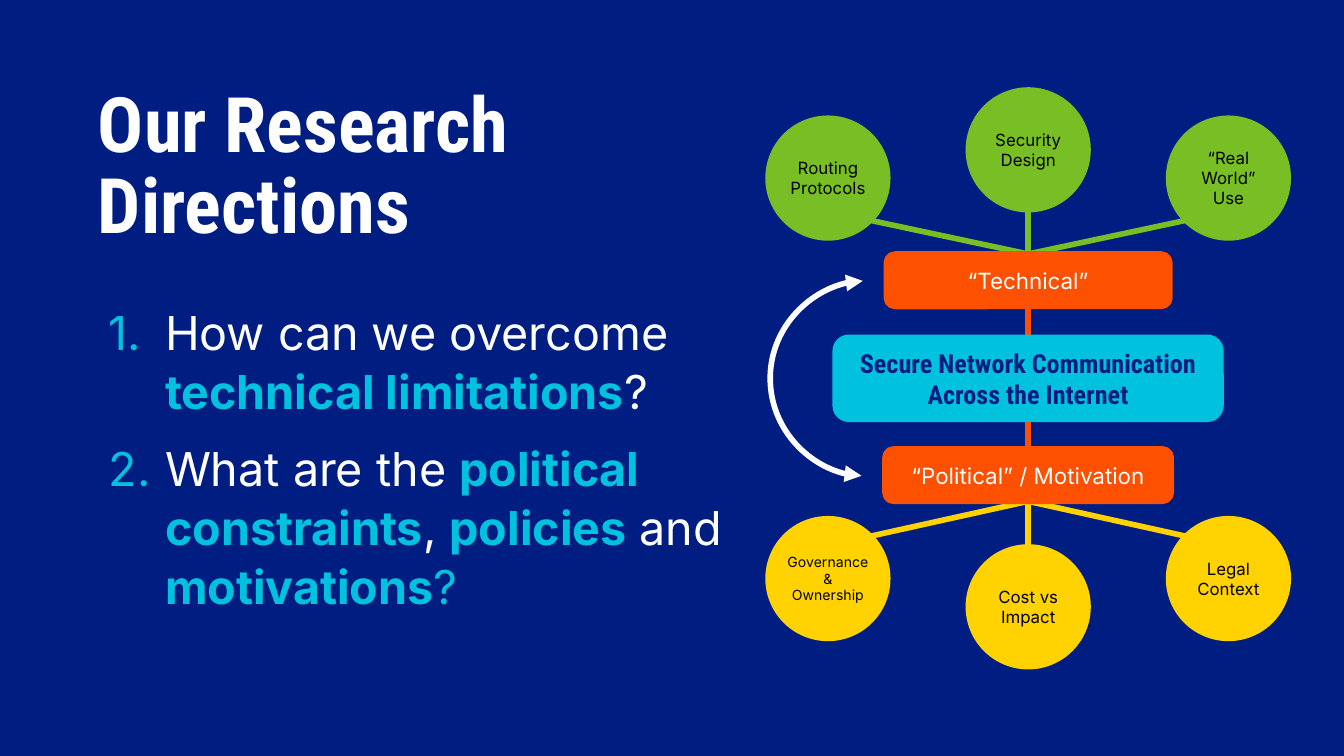
from dataclasses import dataclass

from lxml.etree import SubElement
from pptx import Presentation
from pptx.dml.color import RGBColor
from pptx.enum.shapes import MSO_CONNECTOR, MSO_SHAPE
from pptx.enum.text import MSO_ANCHOR, PP_ALIGN
from pptx.oxml.ns import qn
from pptx.util import Inches, Pt


@dataclass(frozen=True)
class Theme:
    navy: str = "001E82"
    cyan: str = "00C2DE"
    orange: str = "FD5000"
    green: str = "78BF26"
    yellow: str = "FFD200"
    white: str = "FFFFFF"
    black: str = "000000"
    head_font: str = "Roboto Condensed"
    body_font: str = "Inter"
    title: float = 41
    body: float = 25
    core: float = 14
    hub: float = 12
    topic: float = 9
    small: float = 7.5
    line: float = 3


T = Theme()


@dataclass(frozen=True)
class Box:
    text: str
    top: float
    width: float
    height: float
    fill: str
    size: float = T.hub
    color: str = T.white
    font: str = T.body_font
    bold: bool = False


@dataclass(frozen=True)
class Topic:
    text: str
    column: int  # -1 left, 0 centre, 1 right
    top: float
    fill: str
    size: float = T.topic


# Diagram geometry
CENTER_X, COLUMN_GAP, DIAMETER = 7.65, 1.49, 0.89
DIAGONAL = DIAMETER / 2 * 0.5 ** 0.5

TECHNICAL = Box("“Technical”", 1.89, 2.11, 0.39, T.orange)
CORE = Box("Secure Network Communication Across the Internet", 2.51, 2.87, 0.61,
           T.cyan, T.core, T.navy, T.head_font, True)
POLITICAL = Box("“Political” / Motivation", 3.34, 2.13, 0.39, T.orange)

TECHNICAL_TOPICS = [
    Topic("Security Design", 0, 0.67, T.green),
    Topic("Routing Protocols", -1, 0.88, T.green),
    Topic("“Real World” Use", 1, 0.88, T.green),
]
POLITICAL_TOPICS = [
    Topic("Legal Context", 1, 3.86, T.yellow),
    Topic("Cost vs Impact", 0, 4.07, T.yellow),
    Topic("Governance & Ownership", -1, 3.86, T.yellow, T.small),
]

# Runs of each question: text, colour, bold
QUESTIONS = [
    [("How can we overcome ", T.white, False),
     ("technical limitations", T.cyan, True),
     ("?", T.white, False)],
    [("What are the ", T.white, False),
     ("political constraints", T.cyan, True),
     (", ", T.white, False),
     ("policies", T.cyan, True),
     (" and ", T.white, False),
     ("motivations", T.cyan, True),
     ("?", T.cyan, False)],
]


def style(font, name: str, size: float, color: str, bold: bool = False) -> None:
    font.name, font.size, font.bold = name, Pt(size), bold
    font.color.rgb = RGBColor.from_string(color)


def set_insets(tf, inset: float) -> None:
    tf.word_wrap = True
    tf.margin_left = tf.margin_right = Inches(inset)
    tf.margin_top = tf.margin_bottom = Inches(inset)


def add_text_frame(s, left: float, top: float, width: float, height: float):
    tf = s.shapes.add_textbox(Inches(left), Inches(top),
                              Inches(width), Inches(height)).text_frame
    set_insets(tf, 0.1)
    return tf


def number_paragraph(p) -> None:
    pPr = p._p.get_or_add_pPr()
    pPr.set("marL", str(Inches(0.5)))
    pPr.set("indent", str(Inches(-0.42)))
    color = SubElement(pPr, qn("a:buClr"))
    SubElement(color, qn("a:srgbClr"), val=T.cyan)
    SubElement(pPr, qn("a:buAutoNum"), type="arabicPeriod")


def add_node(s, kind, left: float, top: float, width: float, height: float,
             fill: str, text: str, inset: float):
    sp = s.shapes.add_shape(kind, Inches(left), Inches(top),
                            Inches(width), Inches(height))
    sp.shadow.inherit = False
    sp.fill.solid()
    sp.fill.fore_color.rgb = RGBColor.from_string(fill)
    sp.line.color.rgb = RGBColor.from_string(fill)
    sp.line.width = Pt(T.line)
    tf = sp.text_frame
    set_insets(tf, inset)
    tf.vertical_anchor = MSO_ANCHOR.MIDDLE
    tf.text = text
    tf.paragraphs[0].alignment = PP_ALIGN.CENTER
    return sp


def add_box(s, box: Box):
    sp = add_node(s, MSO_SHAPE.ROUNDED_RECTANGLE, CENTER_X - box.width / 2, box.top,
                  box.width, box.height, box.fill, box.text, 0.1)
    style(sp.text_frame.paragraphs[0].runs[0].font, box.font, box.size, box.color, box.bold)
    return sp


def add_line(s, color: str, start: tuple[float, float], end: tuple[float, float],
             kind=MSO_CONNECTOR.STRAIGHT):
    line = s.shapes.add_connector(kind, *map(Inches, start + end))
    line.line.color.rgb = RGBColor.from_string(color)
    line.line.width = Pt(T.line)
    SubElement(line._element.spPr, qn("a:effectLst"))
    return line


def send_to_back(shape) -> None:
    shape._element.getparent().insert(2, shape._element)


def add_topic(s, topic: Topic, hub, hub_site: int) -> None:
    x = CENTER_X + topic.column * COLUMN_GAP
    y = topic.top + DIAMETER / 2
    sp = add_node(s, MSO_SHAPE.OVAL, x - DIAMETER / 2, topic.top, DIAMETER, DIAMETER,
                  topic.fill, topic.text, 0)
    style(sp.text_frame.paragraphs[0].runs[0].font, T.body_font, topic.size, T.black)
    # The spoke leaves the circle on the side that faces the hub
    toward_hub = 1 if hub_site == 0 else -1
    reach = DIAGONAL if topic.column else DIAMETER / 2
    start = (x - topic.column * DIAGONAL, y + toward_hub * reach)
    spoke = add_line(s, topic.fill, start, start)
    spoke.end_connect(hub, hub_site)
    send_to_back(spoke)


def link(s, upper, lower) -> None:
    line = add_line(s, T.orange, (0, 0), (0, 0))
    line.begin_connect(upper, 2)
    line.end_connect(lower, 0)
    send_to_back(line)


def add_cycle_arrow(s) -> None:
    x, width, bulge = 6.42, 0.01, 0.7
    arrow = add_line(s, T.white, (x, 2.09), (x - width, 3.54), MSO_CONNECTOR.CURVE)
    geometry = arrow._element.spPr.find(qn("a:prstGeom"))
    guides = geometry.find(qn("a:avLst"))
    SubElement(guides, qn("a:gd"), name="adj1", fmla=f"val {round(bulge / width * 100000)}")
    ln = arrow.line._get_or_add_ln()
    for end in ("a:headEnd", "a:tailEnd"):
        SubElement(ln, qn(end), type="triangle")


def main() -> None:
    prs = Presentation()
    prs.slide_width = Inches(10)
    prs.slide_height = prs.slide_width * 9 // 16
    s = prs.slides.add_slide(prs.slide_layouts[6])
    s.background.fill.solid()
    s.background.fill.fore_color.rgb = RGBColor.from_string(T.navy)

    # Title
    tf = add_text_frame(s, 0.63, 0.61, 4.79, 1.35)
    tf.vertical_anchor = MSO_ANCHOR.BOTTOM
    tf.text = "Our Research Directions"
    p = tf.paragraphs[0]
    p.line_spacing = 0.88
    style(p.runs[0].font, T.head_font, T.title, T.white, True)

    # Numbered questions
    tf = add_text_frame(s, 0.63, 2.14, 4.88, 2.73)
    for i, question in enumerate(QUESTIONS):
        p = tf.add_paragraph() if i else tf.paragraphs[0]
        number_paragraph(p)
        p.line_spacing = 1.05
        if i:
            p.space_before = p.space_after = Pt(10)
        for text, color, bold in question:
            r = p.add_run()
            r.text = text
            style(r.font, T.body_font, T.body, color, bold)

    # Diagram: stacked boxes, topics around them, and the cycle arrow
    technical, core, political = (add_box(s, b) for b in (TECHNICAL, CORE, POLITICAL))
    link(s, technical, core)
    link(s, core, political)
    for topics, hub, site in ((TECHNICAL_TOPICS, technical, 0),
                              (POLITICAL_TOPICS, political, 2)):
        for topic in topics:
            add_topic(s, topic, hub, site)
    add_cycle_arrow(s)

    prs.save("out.pptx")


if __name__ == "__main__":
    main()
